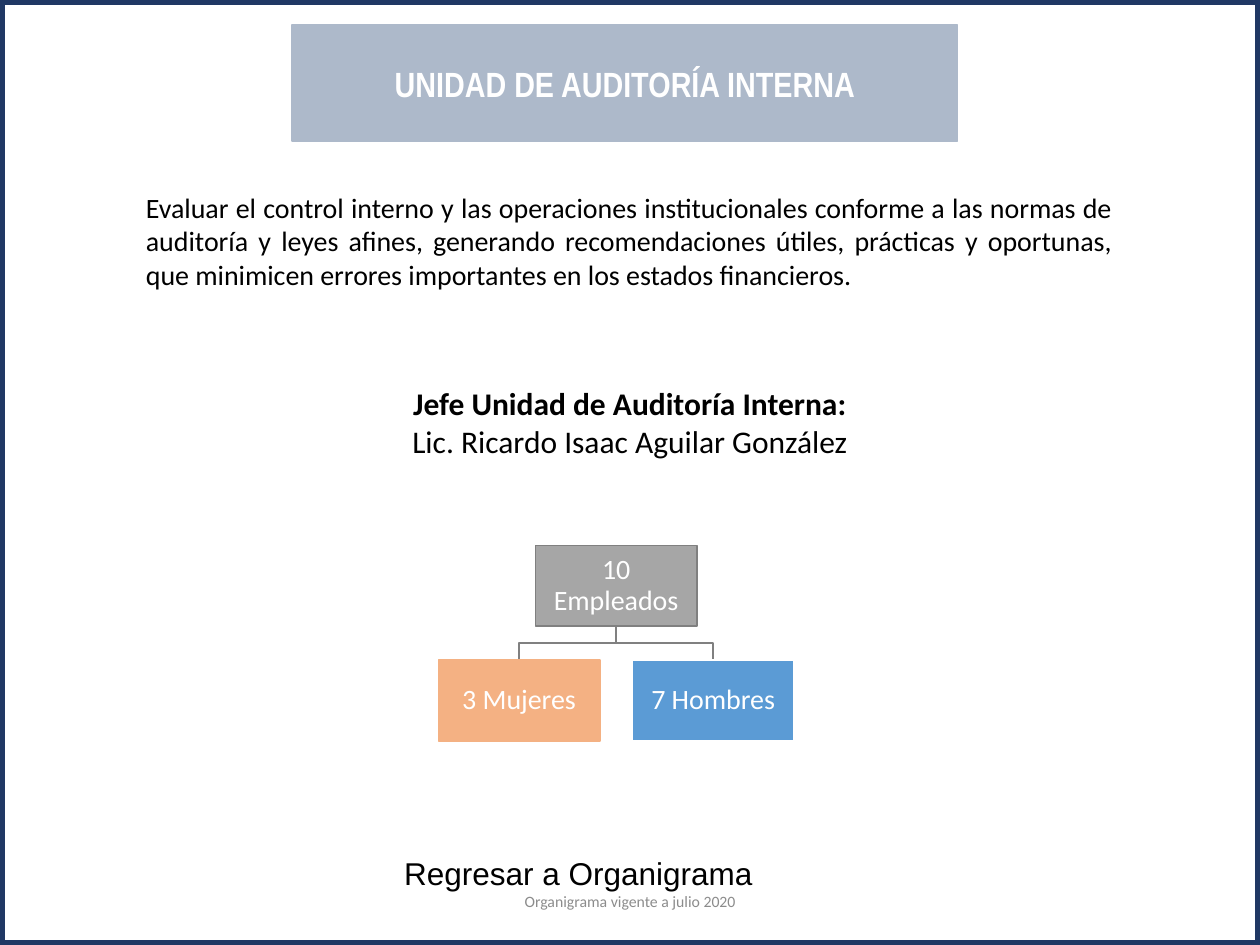
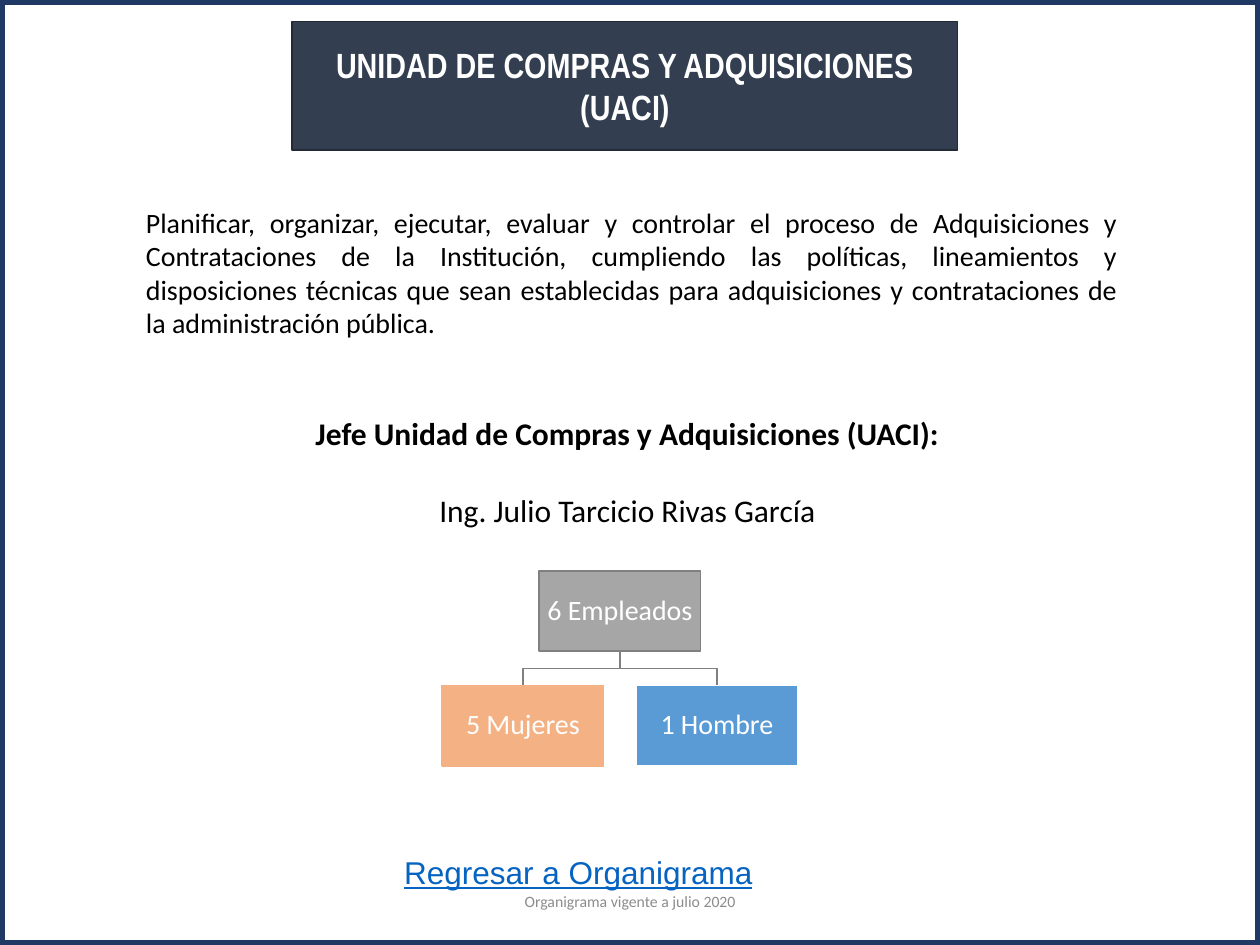
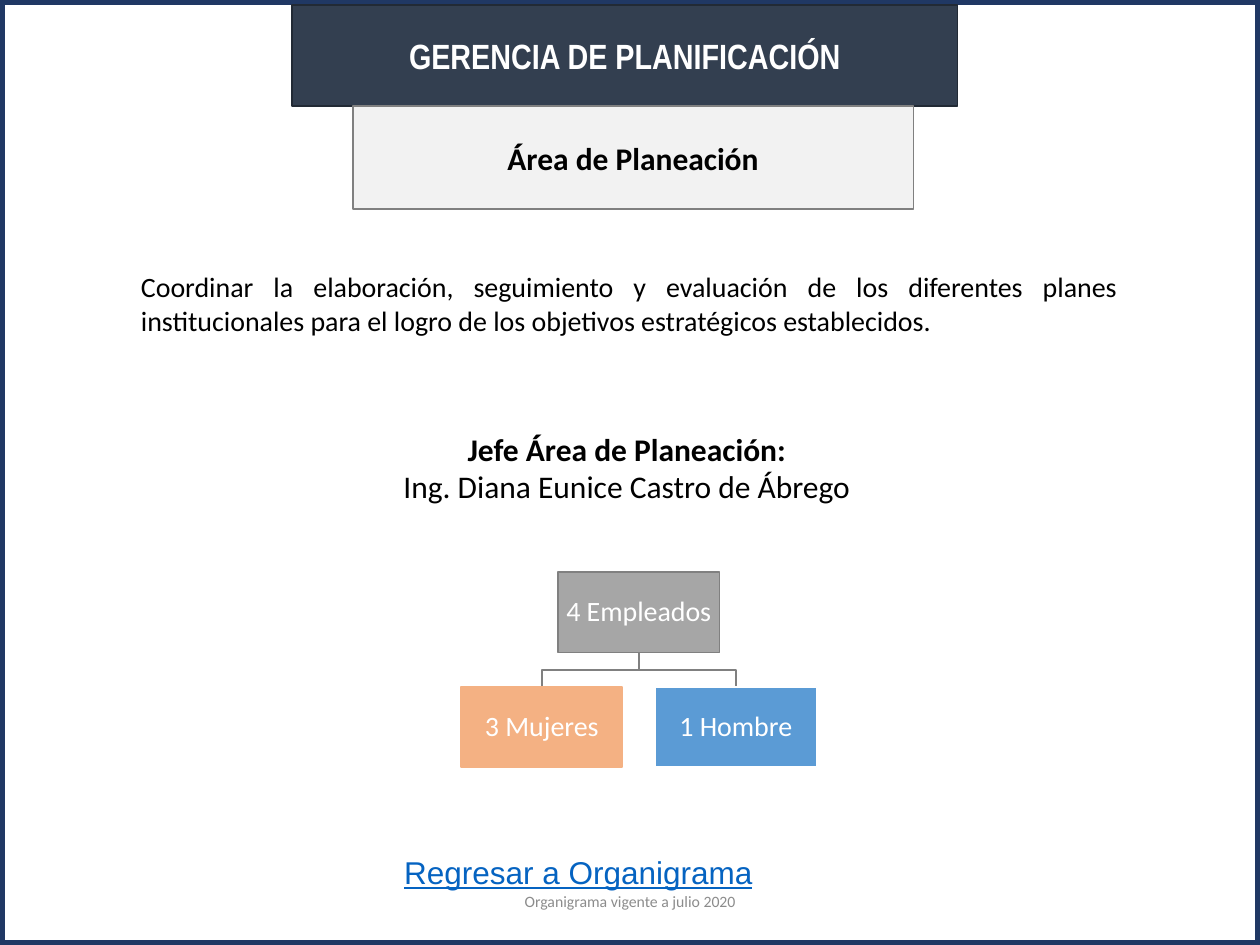
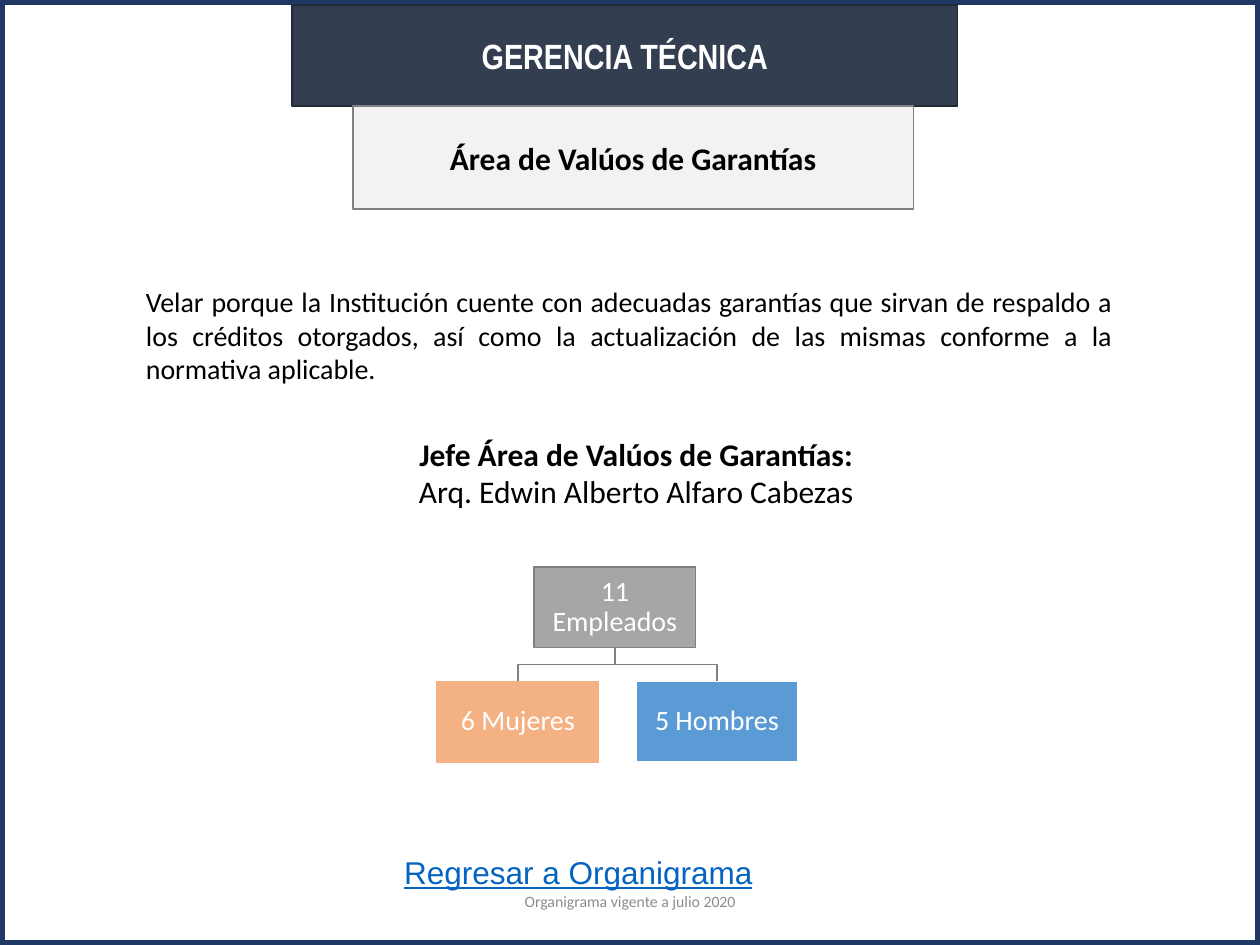
from pptx import Presentation
from pptx.dml.color import RGBColor
from pptx.enum.shapes import MSO_SHAPE
from pptx.enum.text import MSO_ANCHOR, MSO_AUTO_SIZE, PP_ALIGN
from pptx.util import Inches, Pt

RECT = MSO_SHAPE.RECTANGLE
MIDDLE, TOP = MSO_ANCHOR.MIDDLE, MSO_ANCHOR.TOP
LEFT, CENTER, JUSTIFY = PP_ALIGN.LEFT, PP_ALIGN.CENTER, PP_ALIGN.JUSTIFY
GROW, FIXED = MSO_AUTO_SIZE.SHAPE_TO_FIT_TEXT, MSO_AUTO_SIZE.NONE

BLACK = RGBColor(0x00, 0x00, 0x00)
WHITE = RGBColor(0xFF, 0xFF, 0xFF)
NAVY = RGBColor(0x20, 0x38, 0x64)
SLATE = RGBColor(0x33, 0x3F, 0x50)
DARK_SLATE = RGBColor(0x22, 0x2A, 0x35)
PALE_BLUE = RGBColor(0xAD, 0xB9, 0xCA)
PALE_GRAY = RGBColor(0xF2, 0xF2, 0xF2)
MID_GRAY = RGBColor(0xA6, 0xA6, 0xA6)
LINE_GRAY = RGBColor(0x80, 0x80, 0x80)
FOOTER_GRAY = RGBColor(0x8C, 0x8C, 0x8C)
ORANGE = RGBColor(0xF4, 0xB1, 0x83)
BLUE = RGBColor(0x5B, 0x9B, 0xD5)
LINK_BLUE = RGBColor(0x05, 0x63, 0xC1)

TITLE_FONT = dict(name="Arial Narrow", size=Pt(20), bold=True)
HEAD_FONT = dict(name="Calibri", size=Pt(18), bold=True)
NAME_FONT = dict(name="Calibri", size=Pt(18), bold=False)
BODY_FONT = dict(name="Calibri", size=Pt(16))
FOOTER_FONT = dict(name="Calibri", size=Pt(9))
RETURN_FONT = dict(name="Arial", size=Pt(18))

FOOTER = "Organigrama vigente a julio 2020"
RETURN_TEXT = "Regresar a Organigrama"
NODE_W, NODE_H, LEVEL_GAP, BRANCH = 1.28, 0.64, 0.27, 0.77

# tree: left and top of the upper node, then the offset of the right branch
UNITS = [
    dict(title=["UNIDAD DE AUDITORÍA INTERNA"], title_y=(0.2, 0.92),
         colors=(PALE_BLUE, PALE_BLUE), area=None,
         mission="Evaluar el control interno y las operaciones institucionales conforme a las "
                 "normas de auditoría y leyes afines, generando recomendaciones útiles, prácticas "
                 "y oportunas, que minimicen errores importantes en los estados financieros.",
         mission_at=(1.06, 1.46, 7.87, 0.91),
         head=("Jefe Unidad de Auditoría Interna:", "Lic. Ricardo Isaac Aguilar González"),
         head_at=(2.97, 3, 4.06, 1.01), name_gap=0,
         staff=("10 Empleados", "3 Mujeres", "7 Hombres"), tree=(4.25, 4.33, BRANCH),
         return_top=6.73, return_style=(BLACK, False)),
    dict(title=["UNIDAD DE COMPRAS Y ADQUISICIONES", "(UACI)"], title_y=(0.17, 1.02),
         colors=(SLATE, DARK_SLATE), area=None,
         mission="Planificar, organizar, ejecutar, evaluar y controlar el proceso de Adquisiciones "
                 "y Contrataciones de la Institución, cumpliendo las políticas, lineamientos y "
                 "disposiciones técnicas que sean establecidas para adquisiciones y contrataciones "
                 "de la administración pública.",
         mission_at=(1.06, 1.58, 7.91, 1.18),
         head=("Jefe Unidad de Compras y Adquisiciones (UACI):",
               "Ing. Julio Tarcicio Rivas García"),
         head_at=(2.36, 3.24, 5.24, 0.71), name_gap=22,
         staff=("6 Empleados", "5 Mujeres", "1 Hombre"), tree=(4.28, 4.53, BRANCH),
         return_top=6.72, return_style=(LINK_BLUE, True)),
    dict(title=["GERENCIA DE PLANIFICACIÓN"], title_y=(0.04, 0.8),
         colors=(SLATE, DARK_SLATE), area="Área de Planeación",
         mission="Coordinar la elaboración, seguimiento y evaluación de los diferentes planes "
                 "institucionales para el logro de los objetivos estratégicos establecidos.",
         mission_at=(1.02, 2.09, 7.95, 0.64),
         head=("Jefe Área de Planeación:", "Ing. Diana Eunice Castro de Ábrego"),
         head_at=(2.83, 3.36, 4.29, 0.71), name_gap=0,
         staff=("4 Empleados", "3 Mujeres", "1 Hombre"), tree=(4.43, 4.54, BRANCH),
         return_top=6.72, return_style=(LINK_BLUE, True)),
    dict(title=["GERENCIA TÉCNICA"], title_y=(0.04, 0.8),
         colors=(SLATE, DARK_SLATE), area="Área de Valúos de Garantías",
         mission="Velar porque la Institución cuente con adecuadas garantías que sirvan de respaldo "
                 "a los créditos otorgados, así como la actualización de las mismas conforme a la "
                 "normativa aplicable.",
         mission_at=(1.06, 2.21, 7.87, 0.91),
         head=("Jefe Área de Valúos de Garantías:", "Arq. Edwin Alberto Alfaro Cabezas"),
         head_at=(3.13, 3.4, 3.84, 0.71), name_gap=0,
         staff=("11 Empleados", "6 Mujeres", "5 Hombres"), tree=(4.24, 4.5, 0.81),
         return_top=6.72, return_style=(LINK_BLUE, True)),
]


def write(sp, lines, color, align=CENTER, anchor=MIDDLE, fit=FIXED, inset=None):
    """Fill a shape with (text, font values) lines; return its paragraphs."""
    tf = sp.text_frame
    tf.word_wrap, tf.auto_size, tf.vertical_anchor = True, fit, anchor
    if inset is not None:
        for side in ("left", "top", "right", "bottom"):
            setattr(tf, f"margin_{side}", Inches(inset))
    for i, (text, font) in enumerate(lines):
        p = tf.add_paragraph() if i else tf.paragraphs[0]
        p.alignment = align
        r = p.add_run()
        r.text = text
        r.font.color.rgb = color
        for key, value in font.items():
            setattr(r.font, key, value)
    return tf.paragraphs


def paint(sp, fill, line, width=1):
    if fill is None:
        sp.fill.background()
    else:
        sp.fill.solid()
        sp.fill.fore_color.rgb = fill
    sp.line.color.rgb = line
    sp.line.width = Pt(width)


def add_box(s, at, fill, line, width=1):
    sp = s.shapes.add_shape(RECT, *map(Inches, at))
    sp.shadow.inherit = False
    paint(sp, fill, line, width)
    return sp


def add_text(s, at, *args, **kwargs):
    return write(s.shapes.add_textbox(*map(Inches, at)), *args, **kwargs)


def add_frame(prs, s):
    """Put the border on the master so that every slide shows it."""
    frame = add_box(s, (0, 0, 10, 7.5), None, NAVY, 6)
    prs.slide_master.element.cSld.spTree.insert(2, frame.element)


def add_title(s, unit):
    top, height = unit["title_y"]
    title = s.shapes.title
    title.left, title.top, title.width, title.height = map(Inches, (2.32, top, 5.28, height))
    paint(title, *unit["colors"])
    write(title, [(line, TITLE_FONT) for line in unit["title"]], WHITE)


def add_branch(s, x1, y1, x2, y2):
    middle = (y1 + y2) / 2
    points = [(Inches(x), Inches(y)) for x, y in ((x1, y1), (x1, middle), (x2, middle), (x2, y2))]
    builder = s.shapes.build_freeform(*points[0])
    builder.add_line_segments(points[1:], close=False)
    sp = builder.convert_to_shape()
    sp.shadow.inherit = False
    paint(sp, None, LINE_GRAY)


def add_staff_tree(s, staff, left, top, right_branch):
    child_top = top + NODE_H + LEVEL_GAP
    center = left + NODE_W / 2
    for offset in (right_branch, -BRANCH):
        add_branch(s, center, top + NODE_H, center + offset, child_top)
    nodes = [(0, top, MID_GRAY, LINE_GRAY),
             (-BRANCH, child_top, ORANGE, ORANGE),
             (right_branch, child_top, BLUE, WHITE)]
    for text, (offset, y, fill, line) in zip(staff, nodes):
        node = add_box(s, (left + offset, y, NODE_W, NODE_H), fill, line)
        p = write(node, [(text, BODY_FONT)], WHITE, inset=0.01)[0]
        p.line_spacing = 0.9


def add_unit(s, unit):
    add_title(s, unit)
    color, underline = unit["return_style"]
    add_text(s, (3.11, unit["return_top"], 3.27, 0.4),
             [(RETURN_TEXT, dict(RETURN_FONT, underline=underline))],
             color, align=LEFT, anchor=TOP, fit=GROW)
    head = add_text(s, unit["head_at"], list(zip(unit["head"], (HEAD_FONT, NAME_FONT))),
                    BLACK, anchor=TOP, fit=GROW)
    if unit["name_gap"]:
        head[1].space_before = Pt(unit["name_gap"])
    if unit["area"]:
        area = add_box(s, (2.8, 0.84, 4.45, 0.82), PALE_GRAY, LINE_GRAY)
        write(area, [(unit["area"], HEAD_FONT)], BLACK)
    add_staff_tree(s, unit["staff"], *unit["tree"])
    add_text(s, unit["mission_at"], [(unit["mission"], BODY_FONT)],
             BLACK, align=JUSTIFY, anchor=TOP, fit=GROW)
    add_text(s, (3.31, 6.95, 3.38, 0.4), [(FOOTER, FOOTER_FONT)], FOOTER_GRAY)


def main():
    prs = Presentation()
    prs.slide_width, prs.slide_height = Inches(10), Inches(7.5)
    title_only = prs.slide_layouts[5]
    for i, unit in enumerate(UNITS):
        s = prs.slides.add_slide(title_only)
        if i == 0:
            add_frame(prs, s)
        add_unit(s, unit)
    prs.save("out.pptx")


if __name__ == "__main__":
    main()
